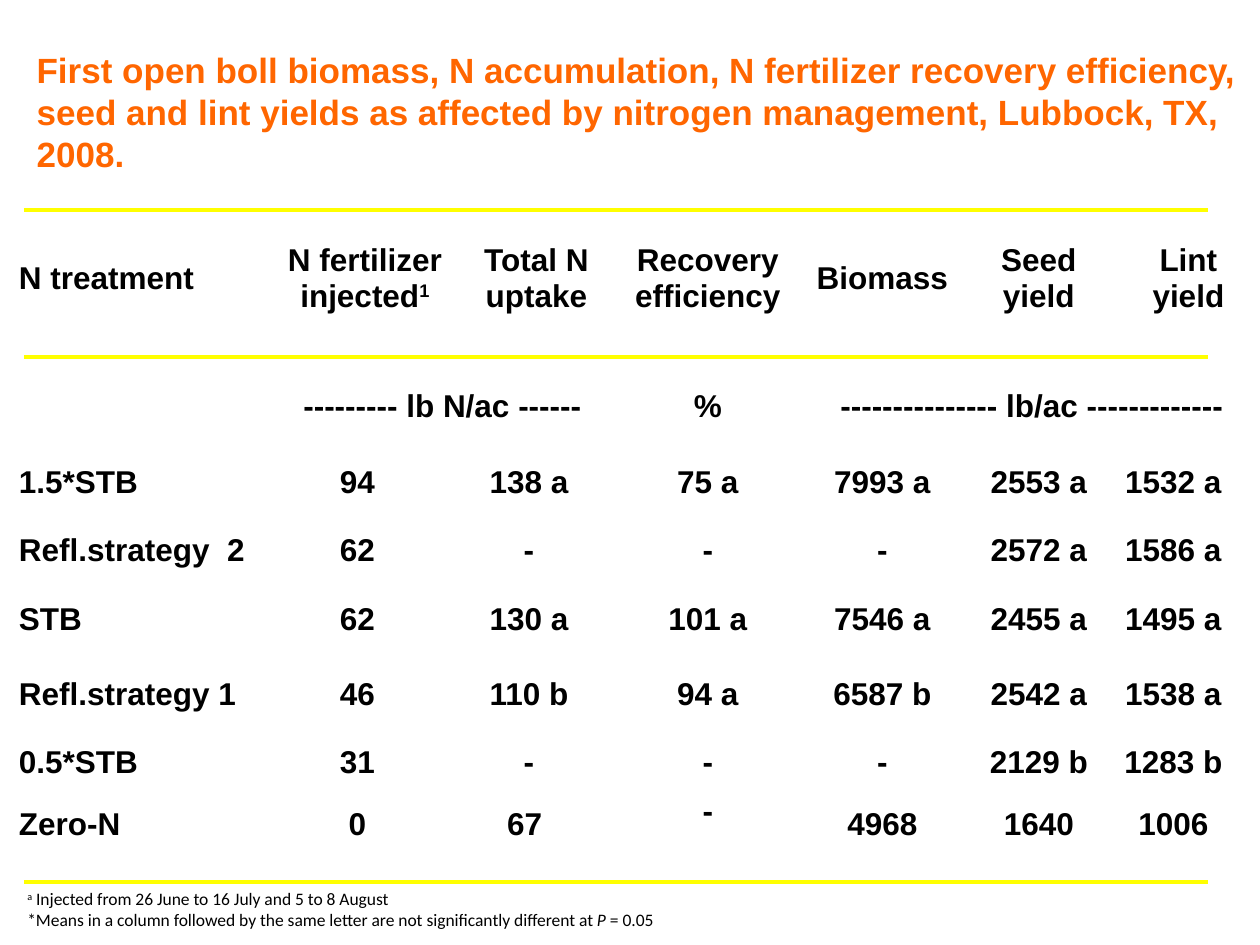
from itertools import accumulate

from pptx import Presentation
from pptx.dml.color import RGBColor
from pptx.enum.shapes import MSO_CONNECTOR as Connector
from pptx.enum.text import MSO_ANCHOR as Anchor, MSO_AUTO_SIZE as AutoSize, PP_ALIGN as Align
from pptx.oxml.ns import qn
from pptx.util import Emu, Pt

EMU_PER_PX = 914400 // 126
NO_STYLE = "{2D5ABB26-0587-4C30-8999-92F81FD0307C}"

TITLE = (
    "First open boll biomass, N accumulation, N fertilizer recovery efficiency, "
    "seed and lint yields as affected by nitrogen management, Lubbock, TX, 2008."
)
COLUMN_WIDTHS = [257, 173, 15, 155, 188, 161, 152, 117, 9]
ROW_HEIGHTS = [179, 77, 75, 62, 75, 75, 62, 62]

HEADER_SPANS = [1, 2, 1, 1, 1, 1, 2]
UNIT_SPANS = [1, 3, 1, 4]
DATA_SPANS = [1, 1, 2, 1, 1, 1, 1]

HEADER = ["N treatment", "N fertilizer injected", "Total N uptake",
          "Recovery efficiency", "Biomass", "Seed yield", "Lint yield"]
UNITS = ["", "--------- lb N/ac ------", "%", "--------------- lb/ac -------------"]
TREATMENTS = [
    ["1.5*STB", "94", "138 a", "75 a", "7993 a", "2553 a", "1532 a"],
    ["Refl.strategy  2", "62", "-", "-", "-", "2572 a", "1586 a"],
    ["STB", "62", "130 a", "101 a", "7546 a", "2455 a", "1495 a"],
    ["Refl.strategy 1", "46", "110 b", "94 a", "6587 b", "2542 a", "1538 a"],
    ["0.5*STB", "31", "-", "-", "-", "2129 b", "1283 b"],
    ["Zero-N", "0", "67 ", "-", "4968", "1640", "1006"],
]


def px(length):
    return Emu(length * EMU_PER_PX)


def color(hex_code):
    return RGBColor.from_string(hex_code)


def set_font(paragraph, name, size, hex_code, bold=False):
    font = paragraph.font
    font.name, font.size, font.bold = name, Pt(size), bold
    font.color.rgb = color(hex_code)


def add_span(para, text, superscript=False, italic=None):
    span = para.add_run()
    span.text = text
    span.font.italic = italic
    if superscript:
        span._r.get_or_add_rPr().set("baseline", "30000")


def place_title(page):
    title = page.shapes.title
    title.left, title.top, title.width, title.height = map(px, (24, 42, 1260, 183))
    frame = title.text_frame
    frame.word_wrap = True
    frame.auto_size = AutoSize.NONE
    frame.vertical_anchor = Anchor.TOP
    frame.text = TITLE
    para = frame.paragraphs[0]
    para.alignment = Align.LEFT
    set_font(para, "Arial", 20, "FF6600", bold=True)


def fill_row(table, row, texts, spans):
    """Write one row, merging each cell over the number of columns in spans."""
    starts = accumulate(spans[:-1], initial=0)
    for start, text, span in zip(starts, texts, spans):
        cell = table.cell(row, start)
        if span > 1:
            cell.merge(table.cell(row, start + span - 1))
        cell.margin_left = cell.margin_right = px(5)
        cell.margin_top = cell.margin_bottom = 0
        cell.vertical_anchor = Anchor.MIDDLE
        para = cell.text_frame.paragraphs[0]
        para.alignment = Align.CENTER if start else Align.LEFT
        set_font(para, "Arial", 18, "000000", bold=True)
        if text:
            add_span(para, text)


def add_yield_table(page):
    frame = page.shapes.add_table(
        len(ROW_HEIGHTS), len(COLUMN_WIDTHS), px(14), px(189),
        px(sum(COLUMN_WIDTHS)), px(sum(ROW_HEIGHTS)))
    table = frame.table
    table.first_row = table.horz_banding = False
    table._tbl.tblPr.find(qn("a:tableStyleId")).text = NO_STYLE
    for column, width in zip(table.columns, COLUMN_WIDTHS):
        column.width = px(width)
    for row, height in zip(table.rows, ROW_HEIGHTS):
        row.height = px(height)
    for cell in table.iter_cells():
        cell.fill.background()

    fill_row(table, 0, HEADER, HEADER_SPANS)
    add_span(table.cell(0, 1).text_frame.paragraphs[0], "1", superscript=True)
    fill_row(table, 1, UNITS, UNIT_SPANS)
    for row, texts in enumerate(TREATMENTS, start=2):
        fill_row(table, row, texts, DATA_SPANS)
    zero_n_recovery = table.cell(len(ROW_HEIGHTS) - 1, 4)
    zero_n_recovery.vertical_anchor = Anchor.TOP


def add_rule(page, y):
    rule = page.shapes.add_connector(Connector.STRAIGHT, px(24), px(y), px(1208), px(y))
    rule.line.color.rgb = color("FFFF00")
    rule.line.width = Pt(2.25)
    rule._element.spPr.add_effectLst() if hasattr(rule._element.spPr, "add_effectLst") else \
        rule._element.spPr.append(rule._element.spPr.makeelement(qn("a:effectLst"), {}))


def add_footnotes(page):
    box = page.shapes.add_textbox(px(15), px(882), px(745), px(63))
    frame = box.text_frame
    frame.word_wrap = True
    injected = frame.paragraphs[0]
    add_span(injected, "a", superscript=True)
    add_span(injected, " Injected from 26 June to 16 July and 5 to 8 August")
    means = frame.add_paragraph()
    add_span(means, "*Means in a column followed by the same letter "
                    "are not significantly different at ")
    add_span(means, "P", italic=True)
    add_span(means, " = 0.05")
    for para in frame.paragraphs:
        set_font(para, "Calibri", 10, "000000")


def main():
    deck = Presentation()
    deck.slide_width, deck.slide_height = px(1260), px(945)
    page = deck.slides.add_slide(deck.slide_layouts[5])
    add_yield_table(page)
    place_title(page)
    for y in (210, 357, 882):
        add_rule(page, y)
    add_footnotes(page)
    deck.save("out.pptx")


if __name__ == "__main__":
    main()
